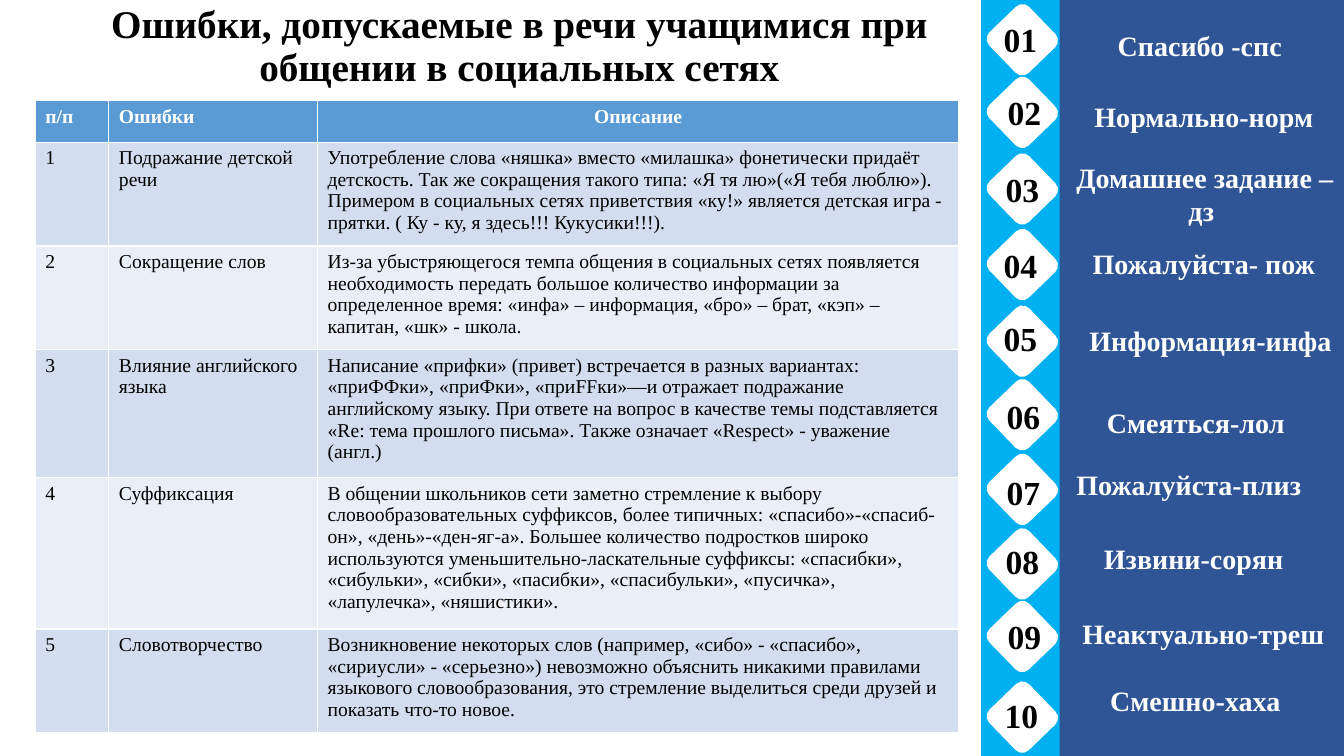
from pptx import Presentation
from pptx.dml.color import RGBColor
from pptx.enum.shapes import MSO_SHAPE
from pptx.enum.text import MSO_ANCHOR, MSO_AUTO_SIZE, PP_ALIGN
from pptx.util import Inches, Pt

CENTER, LEFT = PP_ALIGN.CENTER, PP_ALIGN.LEFT
TOP = MSO_ANCHOR.TOP
NO_AUTOFIT = MSO_AUTO_SIZE.NONE
RECTANGLE, ROUNDED = MSO_SHAPE.RECTANGLE, MSO_SHAPE.ROUNDED_RECTANGLE

FONT = "Times New Roman"
BLACK = RGBColor(0x00, 0x00, 0x00)
WHITE = RGBColor(0xFF, 0xFF, 0xFF)
NAVY = RGBColor(0x2F, 0x55, 0x97)
CYAN = RGBColor(0x00, 0xB0, 0xF0)
HEADER_BLUE = RGBColor(0x5B, 0x9B, 0xD5)
BAND_DARK = RGBColor(0xD2, 0xDE, 0xEF)
BAND_LIGHT = RGBColor(0xEA, 0xEF, 0xF7)

TITLE = "Ошибки, допускаемые в речи учащимися при общении в социальных сетях"
COLUMN_WIDTHS = [0.73, 2.07, 6.36]
ROW_HEIGHTS = [0.41, 1.03, 1.03, 1.27, 1.5, 1.03]
HEADER = ("п/п", "Ошибки", "Описание")
MISTAKES = [
    ("Подражание детской речи",
     "Употребление слова «няшка» вместо «милашка» фонетически придаёт детскость. "
     "Так же сокращения такого типа: «Я тя лю»(«Я тебя люблю»). Примером в социальных "
     "сетях приветствия «ку!» является детская игра - прятки. "
     "( Ку - ку, я здесь!!! Кукусики!!!)."),
    ("Сокращение слов",
     "Из-за убыстряющегося темпа общения в социальных сетях появляется необходимость "
     "передать большое количество информации за определенное время: «инфа» – информация, "
     "«бро» – брат, «кэп» – капитан, «шк» - школа."),
    ("Влияние английского языка",
     "Написание «прифки» (привет) встречается в разных вариантах: «приФФки», «приФки», "
     "«приFFки»—и отражает подражание английскому языку. При ответе на вопрос в качестве "
     "темы подставляется «Re: тема прошлого письма». Также означает «Respect» - уважение "
     "(англ.)"),
    ("Суффиксация",
     "В общении школьников сети заметно стремление к выбору словообразовательных суффиксов, "
     "более типичных: «спасибо»-«спасиб-он», «день»-«ден-яг-а». Большее количество подростков "
     "широко используются уменьшительно-ласкательные суффиксы: «спасибки», «сибульки», "
     "«сибки», «пасибки», «спасибульки», «пусичка», «лапулечка», «няшистики»."),
    ("Словотворчество",
     "Возникновение некоторых слов (например, «сибо» - «спасибо», «сириусли» - «серьезно») "
     "невозможно объяснить никакими правилами языкового словообразования, это стремление "
     "выделиться среди друзей и показать что-то новое."),
]

# Diamond top, number (left, top), word, word box (left, top, width, height)
WORDS = [
    (0.12, (9.85, 0.14), "Спасибо -спс ", (10.87, 0.23, 2.13, 0.44)),
    (0.84, (9.89, 0.86), "Нормально-норм ", (10.75, 0.94, 2.38, 0.44)),
    (1.6, (9.87, 1.63), "Домашнее задание –дз ", (10.57, 1.54, 2.76, 0.77)),
    (2.35, (9.85, 2.38), "Пожалуйста- пож ", (10.73, 2.4, 2.49, 0.44)),
    (3.11, (9.85, 3.1), "Информация-инфа ", (10.68, 3.16, 2.65, 0.44)),
    (3.84, (9.88, 3.88), "Смеяться-лол ", (10.83, 3.97, 2.13, 0.44)),
    (4.58, (9.88, 4.63), "Пожалуйста-плиз ", (10.55, 4.59, 2.55, 0.44)),
    (5.32, (9.87, 5.32), "Извини-сорян ", (10.81, 5.32, 2.13, 0.44)),
    (6.04, (9.89, 6.06), "Неактуально-треш ", (10.6, 6.07, 2.74, 0.44)),
    (6.84, (9.86, 6.84), "Смешно-хаха ", (10.66, 6.73, 2.46, 0.44)),
]


def write(text_frame, text, size, color, bold=True, align=CENTER):
    paragraph = text_frame.paragraphs[0]
    paragraph.alignment = align
    run = paragraph.add_run()
    run.text = text
    run.font.name = FONT
    run.font.size = Pt(size)
    run.font.bold = bold
    run.font.color.rgb = color
    return paragraph


def add_title(slide):
    title = slide.shapes.title
    title.left, title.top = Inches(0.23), Inches(0)
    title.width, title.height = Inches(9.84), Inches(0.73)
    title.text_frame.auto_size = NO_AUTOFIT
    title.text_frame.vertical_anchor = TOP
    paragraph = write(title.text_frame, TITLE, 28, BLACK)
    paragraph.line_spacing = 0.9


def add_block(slide, kind, box, color, rotation=0):
    shape = slide.shapes.add_shape(kind, *map(Inches, box))
    shape.shadow.inherit = False
    shape.fill.solid()
    shape.fill.fore_color.rgb = color
    shape.line.fill.background()
    shape.rotation = rotation


def add_text(slide, box, text, size, color, wrap=True):
    text_frame = slide.shapes.add_textbox(*map(Inches, box)).text_frame
    text_frame.word_wrap = wrap
    write(text_frame, text, size, color)


def add_mistakes_table(slide):
    rows = [HEADER] + [(str(number), *mistake)
                       for number, mistake in enumerate(MISTAKES, 1)]
    frame = slide.shapes.add_table(
        len(rows), len(HEADER), Inches(0.35), Inches(1),
        Inches(sum(COLUMN_WIDTHS)), Inches(sum(ROW_HEIGHTS)))
    table = frame.table
    for column, width in zip(table.columns, COLUMN_WIDTHS):
        column.width = Inches(width)
    for row_index, (texts, height) in enumerate(zip(rows, ROW_HEIGHTS)):
        table.rows[row_index].height = Inches(height)
        is_header = row_index == 0
        band = BAND_DARK if row_index % 2 else BAND_LIGHT
        for column_index, text in enumerate(texts):
            cell = table.cell(row_index, column_index)
            cell.fill.solid()
            cell.fill.fore_color.rgb = HEADER_BLUE if is_header else band
            write(cell.text_frame, text, 14, WHITE if is_header else BLACK,
                  bold=is_header,
                  align=CENTER if is_header and column_index == 2 else LEFT)


def main():
    presentation = Presentation()
    presentation.slide_width = Inches(13.33)
    presentation.slide_height = Inches(7.5)
    slide = presentation.slides.add_slide(presentation.slide_layouts[5])

    # Title and table of mistakes
    add_title(slide)
    add_mistakes_table(slide)

    # Side panel with its stripe
    add_block(slide, RECTANGLE, (10.3, 0, 3.03, 7.5), NAVY)
    add_block(slide, RECTANGLE, (9.73, 0, 0.78, 7.5), CYAN)

    # Numbered words
    for number, (diamond_top, number_place, word, word_box) in enumerate(WORDS, 1):
        add_block(slide, ROUNDED, (9.86, diamond_top, 0.56, 0.55), WHITE, rotation=46)
        add_text(slide, (*number_place, 0.54, 0.5), f"{number:02d}", 24, BLACK, wrap=False)
        add_text(slide, word_box, word, 20, WHITE)

    presentation.save("out.pptx")


if __name__ == "__main__":
    main()
